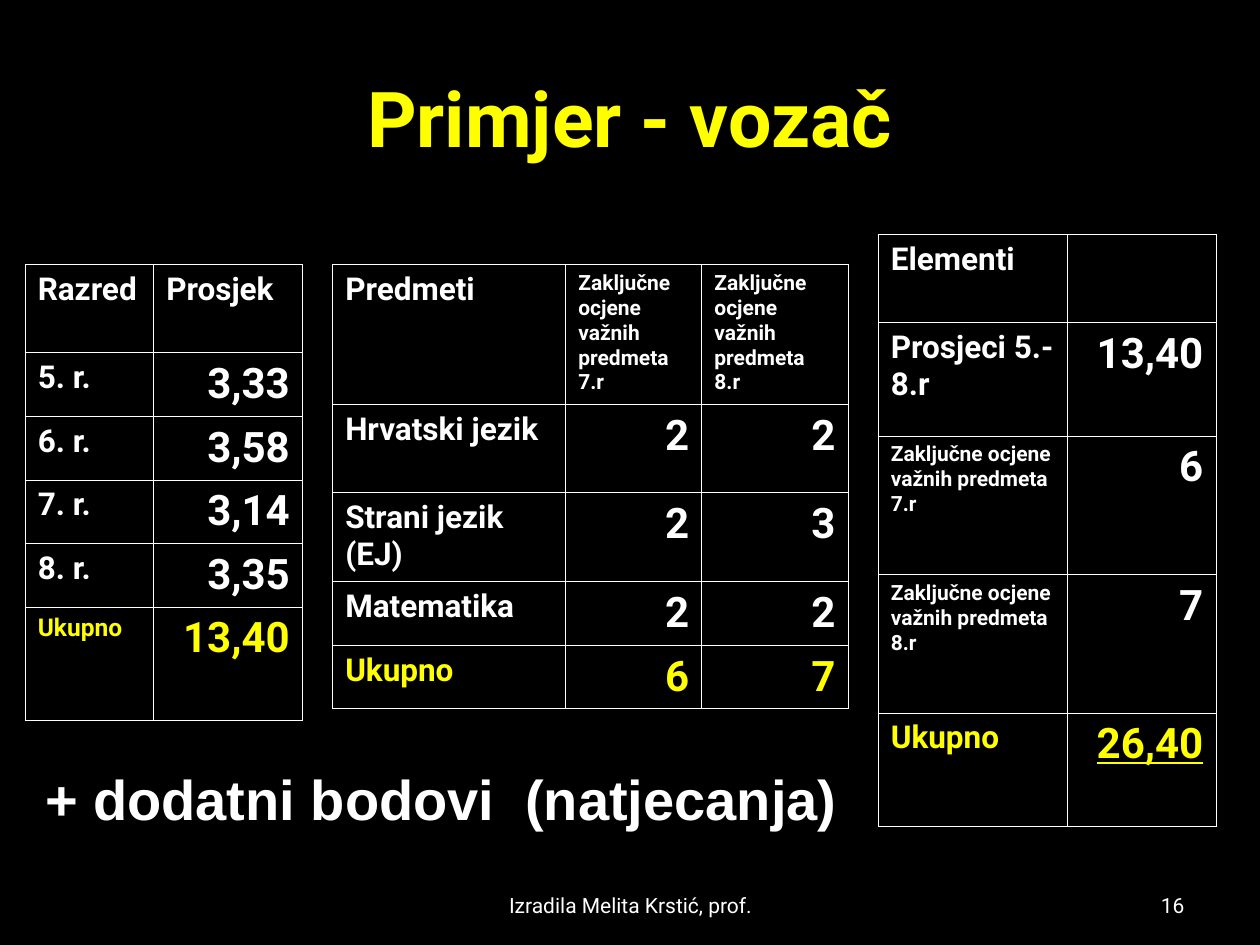
import dataclasses

import lxml.etree
import pptx
import pptx.dml.color
import pptx.enum.text
import pptx.oxml.ns
import pptx.util

ALIGN = pptx.enum.text.PP_ALIGN
ANCHOR = pptx.enum.text.MSO_ANCHOR
WIDE, HIGH = 10, 7.5
COLS, ROWS = 100, 75


@dataclasses.dataclass(frozen=True)
class Theme:
    """Colours, fonts and type sizes of the slide."""
    back: str = "000000"
    ink: str = "FFFFFF"
    gold: str = "FFFF00"
    face: str = "Roboto"
    plain: str = "Arial"
    title: int = 44
    bonus: int = 32
    mark: int = 24
    label: int = 18
    total: int = 14
    small: int = 12
    rule: float = 0.45
    lead: float = 1.01


THEME = Theme()


def across(cols):
    """Turn grid columns into a length."""
    return pptx.util.Inches(cols * WIDE / COLS)


def down(rows):
    """Turn grid rows into a length."""
    return pptx.util.Inches(rows * HIGH / ROWS)


def write(frame, text, size=THEME.label, color=THEME.ink, face=THEME.face,
          bold=True, line=False, align=ALIGN.LEFT, lead=None):
    """Put formatted text into a text frame."""
    para = frame.paragraphs[0]
    para.alignment = align
    if lead:
        para.line_spacing = lead
    run = para.add_run()
    run.text = text
    font = run.font
    font.name, font.size, font.bold = face, pptx.util.Pt(size), bold
    font.underline = line
    font.color.rgb = pptx.dml.color.RGBColor.from_string(color)


def add_text(slide, box, text, anchor=ANCHOR.TOP, **style):
    """Add a text box at a grid box of left, top, width and height."""
    left, top, width, height = box
    shape = slide.shapes.add_textbox(
        across(left), down(top), across(width), down(height))
    frame = shape.text_frame
    frame.word_wrap = True
    frame.vertical_anchor = anchor
    write(frame, text, **style)


def add_rules(cell):
    """Draw thin lines on all four sides of a cell."""
    props = cell._tc.get_or_add_tcPr()
    name = pptx.oxml.ns.qn
    for spot, side in enumerate(("a:lnL", "a:lnR", "a:lnT", "a:lnB")):
        edge = lxml.etree.Element(name(side), w=str(pptx.util.Pt(THEME.rule)))
        fill = lxml.etree.SubElement(edge, name("a:solidFill"))
        lxml.etree.SubElement(fill, name("a:srgbClr"), val=THEME.ink)
        props.insert(spot, edge)


def add_grid(slide, left, top, widths, heights, data,
             total=THEME.label, line=False):
    """Add a table with labels at left, marks at right and a gold last row."""
    table = slide.shapes.add_table(
        len(heights), len(widths), across(left), down(top),
        across(sum(widths)), down(sum(heights))).table
    table.first_row = table.horz_banding = False
    for col, width in zip(table.columns, widths):
        col.width = across(width)
    for row, height in zip(table.rows, heights):
        row.height = down(height)
    last = len(data) - 1
    for y, texts in enumerate(data):
        for x, text in enumerate(texts):
            cell = table.cell(y, x)
            cell.fill.background()
            add_rules(cell)
            mark = x > 0 and y > 0
            if mark:
                size = THEME.mark
            elif y == last:
                size = total
            else:
                size = THEME.small if len(text) > 20 else THEME.label
            write(cell.text_frame, text, size=size,
                  color=THEME.gold if y == last else THEME.ink,
                  align=ALIGN.RIGHT if mark else ALIGN.LEFT,
                  line=line and mark and y == last, lead=THEME.lead)


def main():
    """Build and save the slide."""
    deck = pptx.Presentation()
    deck.slide_width, deck.slide_height = across(COLS), down(ROWS)
    slide = deck.slides.add_slide(deck.slide_layouts[6])
    fill = slide.background.fill
    fill.solid()
    fill.fore_color.rgb = pptx.dml.color.RGBColor.from_string(THEME.back)

    add_text(slide, (5, 3, 90, 12.5), "Primjer - vozač", ANCHOR.MIDDLE,
             size=THEME.title, color=THEME.gold, align=ALIGN.CENTER)

    grades = [f"Zaključne ocjene važnih predmeta {year}.r" for year in (7, 8)]
    add_grid(slide, 2, 21, (10.2, 11.8), (7, 5.05, 5.05, 5.05, 5.05, 9), [
        ("Razred", "Prosjek"),
        ("5. r.", "3,33"),
        ("6. r.", "3,58"),
        ("7. r.", "3,14"),
        ("8. r.", "3,35"),
        ("Ukupno", "13,40"),
    ], total=THEME.total)
    add_grid(slide, 26.4, 21, (18.5, 10.8, 11.6), (11.1, 7, 7, 5.05, 5.05), [
        ("Predmeti", *grades),
        ("Hrvatski jezik", "2", "2"),
        ("Strani jezik (EJ)", "2", "3"),
        ("Matematika", "2", "2"),
        ("Ukupno", "6", "7"),
    ])
    add_grid(slide, 69.7, 18.6, (15, 11.8), (7, 9, 11, 11, 9), [
        ("Elementi", ""),
        ("Prosjeci 5.-8.r", "13,40"),
        (grades[0], "6"),
        (grades[1], "7"),
        ("Ukupno", "26,40"),
    ], line=True)

    foot = dict(anchor=ANCHOR.BOTTOM, size=THEME.small, bold=False)
    add_text(slide, (71.7, 68.3, 23.3, 5), "16", align=ALIGN.RIGHT, **foot)
    add_text(slide, (34.2, 68.3, 31.7, 5), "Izradila Melita Krstić, prof.",
             align=ALIGN.CENTER, **foot)
    add_text(slide, (2.6, 60.2, 65.4, 6.4), "+ dodatni bodovi  (natjecanja)",
             size=THEME.bonus, face=THEME.plain)
    deck.save("out.pptx")


if __name__ == "__main__":
    main()
